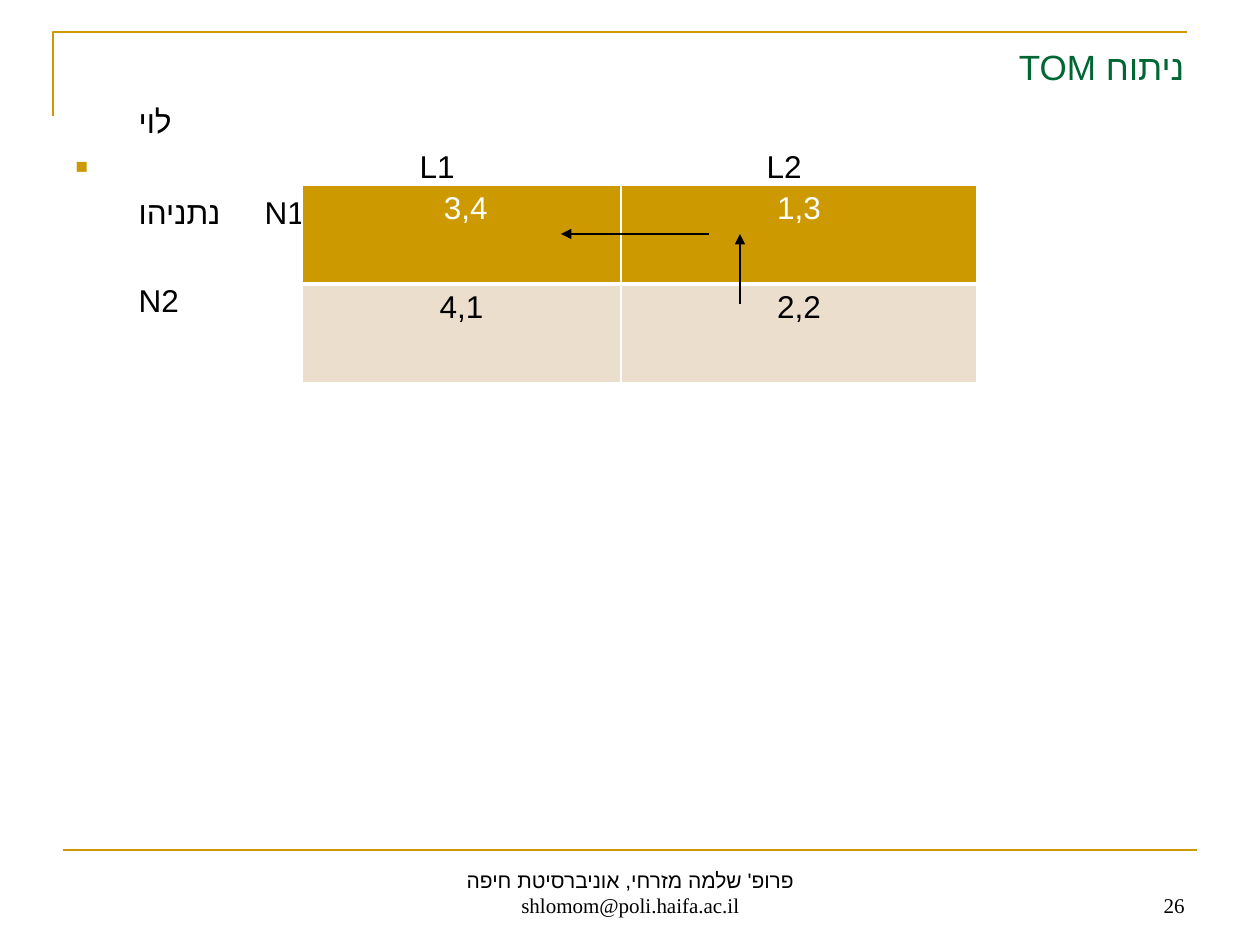
from lxml import etree
from pptx import Presentation
from pptx.dml.color import RGBColor
from pptx.enum.shapes import MSO_CONNECTOR
from pptx.enum.text import MSO_ANCHOR, MSO_AUTO_SIZE, PP_ALIGN
from pptx.oxml.ns import qn
from pptx.util import Emu, Pt

STRAIGHT = MSO_CONNECTOR.STRAIGHT
BOTTOM, MIDDLE, TOP = MSO_ANCHOR.BOTTOM, MSO_ANCHOR.MIDDLE, MSO_ANCHOR.TOP
LEFT, CENTER, RIGHT = PP_ALIGN.LEFT, PP_ALIGN.CENTER, PP_ALIGN.RIGHT
NO_AUTOFIT = MSO_AUTO_SIZE.NONE

BLACK = RGBColor(0x00, 0x00, 0x00)
WHITE = RGBColor(0xFF, 0xFF, 0xFF)
GOLD = RGBColor(0xCC, 0x99, 0x00)
GREEN = RGBColor(0x00, 0x66, 0x33)
SAND = RGBColor(0xEC, 0xDE, 0xCC)

SANS, SERIF = "Arial", "Times New Roman"
BODY_FONT = {"name": SANS, "size": Pt(18)}
FOOTER_FONT = {"name": SERIF, "size": Pt(12)}

# tabbed text, tab stops in px from the text edge, space before in pt, bulleted
BODY_ROWS = [
    ("\tלוי", [691], 0, False),
    ("\tL1\tL2", [344, 691], 4.2, True),
    ("\tנתניהו\tN1", [39, 165], 4.2, False),
    ("\tN2", [170], 29, False),
]
PAYOFFS = [[" 3,4", "1,3"], ["4,1", "2,2"]]
ROW_STYLES = [(GOLD, WHITE, 3), (SAND, BLACK, 1)]  # fill, text, bottom border
ARROWS = [((740, 304), (740, 234)), ((709, 234), (561, 234))]


def px(length):
    return Emu(round(length * 914400 / 126))


def add_child(parent, tag, **values):
    child = etree.SubElement(parent, qn(tag))
    for name, value in values.items():
        child.set(name, str(value))
    return child


def place(shape, left, top, width, height):
    shape.left, shape.top = px(left), px(top)
    shape.width, shape.height = px(width), px(height)


def add_span(para, text, color, font):
    span = para.add_run()
    span.text = text
    for name, value in font.items():
        setattr(span.font, name, value)
    span.font.color.rgb = color
    add_child(span.font._element, "a:cs", typeface=SANS)


def set_frame(frame, anchor):
    values = {"word_wrap": True, "auto_size": NO_AUTOFIT, "vertical_anchor": anchor}
    for name, value in values.items():
        setattr(frame, name, value)


def fill_title(title):
    place(title, 63, 38, 1134, 57)
    set_frame(title.text_frame, MIDDLE)
    para = title.text_frame.paragraphs[0]
    para.alignment = RIGHT
    para._p.get_or_add_pPr().set("rtl", "1")
    for text, name in (("ניתוח ", SERIF), ("TOM", SANS)):
        add_span(para, text, GREEN, {"name": name, "size": Pt(20)})


def set_list_format(para, stops, bulleted):
    """Set the bullet and the tab stops of one body row."""
    props = para._p.get_or_add_pPr()
    for name in ("marL", "indent"):
        props.set(name, "0")
    if bulleted:
        add_child(add_child(props, "a:buClr"), "a:srgbClr", val=GOLD)
        add_child(props, "a:buSzPct", val=65000)
        add_child(props, "a:buFont", typeface=SANS)
        add_child(props, "a:buChar", char="■")
    else:
        add_child(props, "a:buNone")
    tabs = add_child(props, "a:tabLst")
    for stop in stops:
        add_child(tabs, "a:tab", pos=px(stop), algn="l")


def fill_body(body):
    place(body, 63, 96, 1134, 750)
    frame = body.text_frame
    set_frame(frame, TOP)
    for index, (text, stops, space, bulleted) in enumerate(BODY_ROWS):
        para = frame.add_paragraph() if index else frame.paragraphs[0]
        para.alignment = LEFT
        para.space_before = Pt(space)
        set_list_format(para, stops, bulleted)
        add_span(para, text, BLACK, BODY_FONT)


def add_footer(page, lines, left, width, align):
    box = page.shapes.add_textbox(px(left), px(861), px(width), px(63))
    set_frame(box.text_frame, BOTTOM)
    para = box.text_frame.paragraphs[0]
    para.alignment = align
    for index, line in enumerate(lines):
        if index:
            para.add_line_break()
        add_span(para, line, BLACK, FOOTER_FONT)


def set_borders(cell, bottom):
    props = cell._tc.get_or_add_tcPr()
    widths = {"a:lnL": 1, "a:lnR": 1, "a:lnT": 1, "a:lnB": bottom}
    for index, (tag, width) in enumerate(widths.items()):
        line = etree.Element(qn(tag), w=str(Pt(width)))
        add_child(add_child(line, "a:solidFill"), "a:srgbClr", val=WHITE)
        props.insert(index, line)


def add_payoff_table(page):
    table = page.shapes.add_table(2, 2, px(302), px(185), px(675), px(198)).table
    for column, width in zip(table.columns, (319, 356)):
        column.width = px(width)
    for r, (fill, color, bottom) in enumerate(ROW_STYLES):
        table.rows[r].height = px(99)
        for c, text in enumerate(PAYOFFS[r]):
            cell = table.cell(r, c)
            cell.fill.solid()
            cell.fill.fore_color.rgb = fill
            set_borders(cell, bottom)
            para = cell.text_frame.paragraphs[0]
            para.alignment = CENTER
            add_span(para, text, color, BODY_FONT)


def add_line(page, start, end, color, width, arrow=False):
    line = page.shapes.add_connector(STRAIGHT, *map(px, start + end))
    line.line.color.rgb = color
    line.line.width = Pt(width)
    if arrow:
        add_child(line.line._get_or_add_ln(), "a:tailEnd", type="triangle")
    add_child(line._element.spPr, "a:effectLst")


def add_corner(page):
    builder = page.shapes.build_freeform(px(53), px(116))
    builder.add_line_segments([(px(53), px(32)), (px(1187), px(32))], close=False)
    corner = builder.convert_to_shape()
    corner.fill.background()
    corner.line.color.rgb = GOLD
    corner.line.width = Pt(1.5)
    corner.shadow.inherit = False


def main():
    deck = Presentation()
    deck.slide_width, deck.slide_height = px(1260), px(945)
    page = deck.slides.add_slide(deck.slide_layouts[1])
    add_corner(page)
    add_line(page, (63, 850), (1197, 850), GOLD, 1.5)
    fill_title(page.shapes.title)
    fill_body(page.placeholders[1])
    add_footer(page, ["26"], 903, 294, RIGHT)
    add_payoff_table(page)
    for start, end in ARROWS:
        add_line(page, start, end, BLACK, 0.75, arrow=True)
    add_footer(page, ["פרופ' שלמה מזרחי, אוניברסיטת חיפה", "shlomom@poli.haifa.ac.il"],
               431, 399, CENTER)
    deck.save("out.pptx")


if __name__ == "__main__":
    main()
